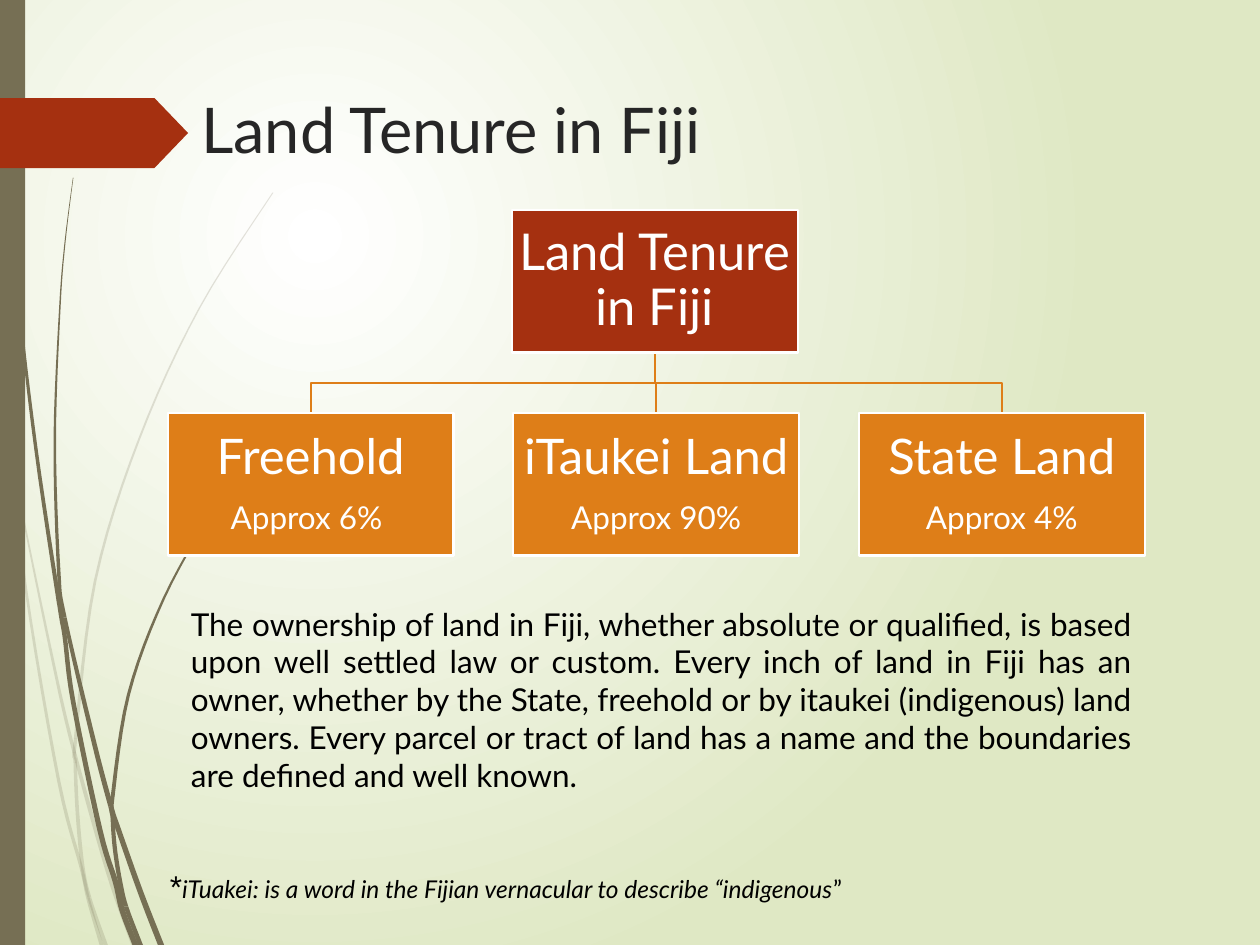
from lxml import etree
from pptx import Presentation, util as u
from pptx.dml.color import RGBColor
from pptx.enum import shapes, text
from pptx.oxml.ns import qn

WHITE = RGBColor(0xFF, 0xFF, 0xFF)
BLACK = RGBColor(0, 0, 0)
CHARCOAL = RGBColor(0x26, 0x26, 0x26)
SAGE = RGBColor(0xDF, 0xE8, 0xC4)
OLIVE = RGBColor(0x76, 0x6F, 0x54)
RUST = RGBColor(0xA5, 0x30, 0x10)
ORANGE = RGBColor(0xDE, 0x7E, 0x18)

deck = Presentation()
deck.slide_width, deck.slide_height = u.Pt(720), u.Pt(540)
page = deck.slides.add_slide(deck.slide_layouts[6])


def draw_outline(points, closed):
    corners = [(u.Pt(x), u.Pt(y)) for x, y in points]
    builder = page.shapes.build_freeform(*corners[0], scale=1.0)
    builder.add_line_segments(corners[1:], close=closed)
    outline = builder.convert_to_shape()
    outline.shadow.inherit = False
    return outline


def add_span(para, words, size, color, font="Lato", italic=False):
    span = para.add_run()
    span.text = words
    span.font.size, span.font.name = u.Pt(size), font
    span.font.color.rgb, span.font.italic = color, italic


# Background: radial gradient centred in the upper left
backdrop = page.background.fill
backdrop.gradient()
for stop, color in zip(backdrop.gradient_stops, (WHITE, SAGE)):
    stop.color.rgb = color
gradient = next(page.element.iter(qn("a:gradFill")))
gradient.remove(gradient.find(qn("a:lin")))
radial = etree.SubElement(gradient, qn("a:path"), path="circle")
etree.SubElement(radial, qn("a:fillToRect"), l="50000", t="50000", r="100000", b="100000")

# Grass blades: opacity, tip width, root width, knots where a new piece starts,
# centre line from tip to root
blades = [
    (20, 1, 2.2, [1, 5], [(0, 209), (5.5, 252), (15, 338), (33.5, 446), (46.5, 496),
                          (50.5, 514), (58, 540)]),
    (20, 0.5, 3, [3], [(7.2, 248), (8, 268), (29.7, 375), (42.5, 430), (62, 499), (76.5, 540)]),
    (20, 0.6, 2.4, [4, 5, 8], [(156, 110), (114, 176), (79.5, 251), (54.4, 332), (43.2, 422),
                               (43, 436), (44.3, 465), (47.2, 495), (51.1, 513), (60.5, 540)]),
    (100, 0.7, 3.4, [5, 10], [(1.8, 0), (2.5, 34.5), (4, 79), (10.4, 168), (20.5, 256),
                              (33.8, 345), (37, 364), (41.8, 401), (57, 474), (66, 504),
                              (69.8, 520), (77.4, 540)]),
    (100, 0.3, 3.6, [4, 5, 7], [(41.8, 101.5), (37.1, 139), (34.2, 176), (31.3, 251), (33.5, 325),
                                (37, 353), (54, 425.5), (63.4, 461), (66.6, 471), (80, 509),
                                (92, 540)]),
    (100, 0.8, 2.8, [5, 6, 9], [(155.5, 247.7), (137.5, 269), (121.3, 292), (93.6, 342),
                                (73.4, 397), (64.4, 455), (64.4, 468), (65.7, 485), (68.5, 503),
                                (72, 518), (80.3, 540)]),
]
STEPS = 6
for opacity, tip, root, cuts, knots in blades:
    # Catmull-Rom curve through the knots
    ends = [knots[0], *knots, knots[-1]]
    curve = [knots[0]]
    for a, b, c, d in zip(ends, ends[1:], ends[2:], ends[3:]):
        for step in range(1, STEPS + 1):
            t = step / STEPS
            curve.append(tuple(
                0.5 * (2 * q + (r - p) * t + (2 * p - 5 * q + 4 * r - s) * t**2
                       + (3 * q - p - 3 * r + s) * t**3)
                for p, q, r, s in zip(a, b, c, d)))
    top, bottom = knots[0][1], knots[-1][1]
    halves = [(tip + (root - tip) * (y - top) / (bottom - top)) / 2 for x, y in curve]
    left = [(x - half, y) for (x, y), half in zip(curve, halves)]
    right = [(x + half, y) for (x, y), half in zip(curve, halves)]
    for start, end in zip([0, *cuts], [*cuts, len(knots) - 1]):
        piece = slice(start * STEPS, end * STEPS + 1)
        blade = draw_outline(left[piece] + right[piece][::-1], True)
        blade.fill.solid()
        blade.fill.fore_color.rgb = OLIVE
        blade.line.fill.background()
        tint = blade.fill._xPr.find(qn("a:solidFill"))[0]
        etree.SubElement(tint, qn("a:alpha"), val=str(opacity * 1000))

# Side strip and title arrow
for kind, top, width, height, color in [
    (shapes.MSO_SHAPE.RECTANGLE, 0, 14.4, 540, OLIVE),
    (shapes.MSO_SHAPE.PENTAGON, 56, 107.5, 40, RUST),
]:
    accent = page.shapes.add_shape(kind, 0, u.Pt(top), u.Pt(width), u.Pt(height))
    accent.shadow.inherit = False
    accent.fill.solid()
    accent.fill.fore_color.rgb = color
    accent.line.fill.background()
accent.adjustments[0] = 0.48

# Organisation chart: geometry
BOX_WIDTH, BOX_HEIGHT = 163.4, 81.5
ROOT_LEFT, ROOT_TOP = 292.5, 120
CHILD_LEFT, CHILD_TOP, CHILD_PITCH = 95.8, 236, 197.5
tenures = [("Freehold", "Approx 6% "), ("iTaukei Land", "Approx 90%"), ("State Land", "Approx 4%")]
nodes = [(ROOT_LEFT, ROOT_TOP, RUST, [("Land Tenure in Fiji", 29)])]
for column, (name, share) in enumerate(tenures):
    nodes.append((CHILD_LEFT + column * CHILD_PITCH, CHILD_TOP, ORANGE, [(name, 28), (share, 18)]))

# Organisation chart: branches behind the boxes
stem_x, stem_top = ROOT_LEFT + BOX_WIDTH / 2, ROOT_TOP + BOX_HEIGHT
bend_y = (stem_top + CHILD_TOP) / 2
for left, top, *_ in nodes[1:]:
    child_x = left + BOX_WIDTH / 2
    branch = draw_outline(
        [(stem_x, stem_top), (stem_x, bend_y), (child_x, bend_y), (child_x, top)], False)
    branch.fill.background()
    branch.line.color.rgb, branch.line.width = ORANGE, u.Pt(1.25)

# Organisation chart: boxes
for left, top, color, lines in nodes:
    box = page.shapes.add_shape(shapes.MSO_SHAPE.RECTANGLE, u.Pt(left), u.Pt(top),
                                u.Pt(BOX_WIDTH), u.Pt(BOX_HEIGHT))
    box.shadow.inherit = False
    box.fill.solid()
    box.fill.fore_color.rgb = color
    box.line.color.rgb, box.line.width = WHITE, u.Pt(1.25)
    frame = box.text_frame
    frame.word_wrap = True
    frame.vertical_anchor = text.MSO_ANCHOR.MIDDLE
    frame.margin_left = frame.margin_right = frame.margin_top = frame.margin_bottom = u.Pt(1.5)
    for index, (words, size) in enumerate(lines):
        para = frame.add_paragraph() if index else frame.paragraphs[0]
        para.alignment, para.line_spacing = text.PP_ALIGN.CENTER, 0.9
        para.space_after = u.Pt(10)
        add_span(para, words, size, WHITE)

# Title, footnote and body text
body = ("The ownership of land in Fiji, whether absolute or qualified, is based upon well settled "
        "law or custom. Every inch of land in Fiji has an owner, whether by the State, freehold or "
        "by itaukei (indigenous) land owners. Every parcel or tract of land has a name and the "
        "boundaries are defined and well known.")
footnote = "iTuakei: is a word in the Fijian vernacular to describe “indigenous"
for left, top, width, height, align, spans in [
    (108, 48.25, 340.5, 68.5, text.PP_ALIGN.LEFT, [("Land Tenure in Fiji", 36, CHARCOAL)]),
    (90, 491.75, 582, 29, text.PP_ALIGN.LEFT,
     [("*", 18, BLACK, "Arial"), (footnote, 14, BLACK, "Lato", True), ("”", 14, BLACK)]),
    (102, 342, 552, 116.5, text.PP_ALIGN.JUSTIFY, [(body, 18, BLACK)]),
]:
    box = page.shapes.add_textbox(u.Pt(left), u.Pt(top), u.Pt(width), u.Pt(height))
    box.text_frame.word_wrap = True
    para = box.text_frame.paragraphs[0]
    para.alignment = align
    for span in spans:
        add_span(para, *span)

deck.save("out.pptx")
